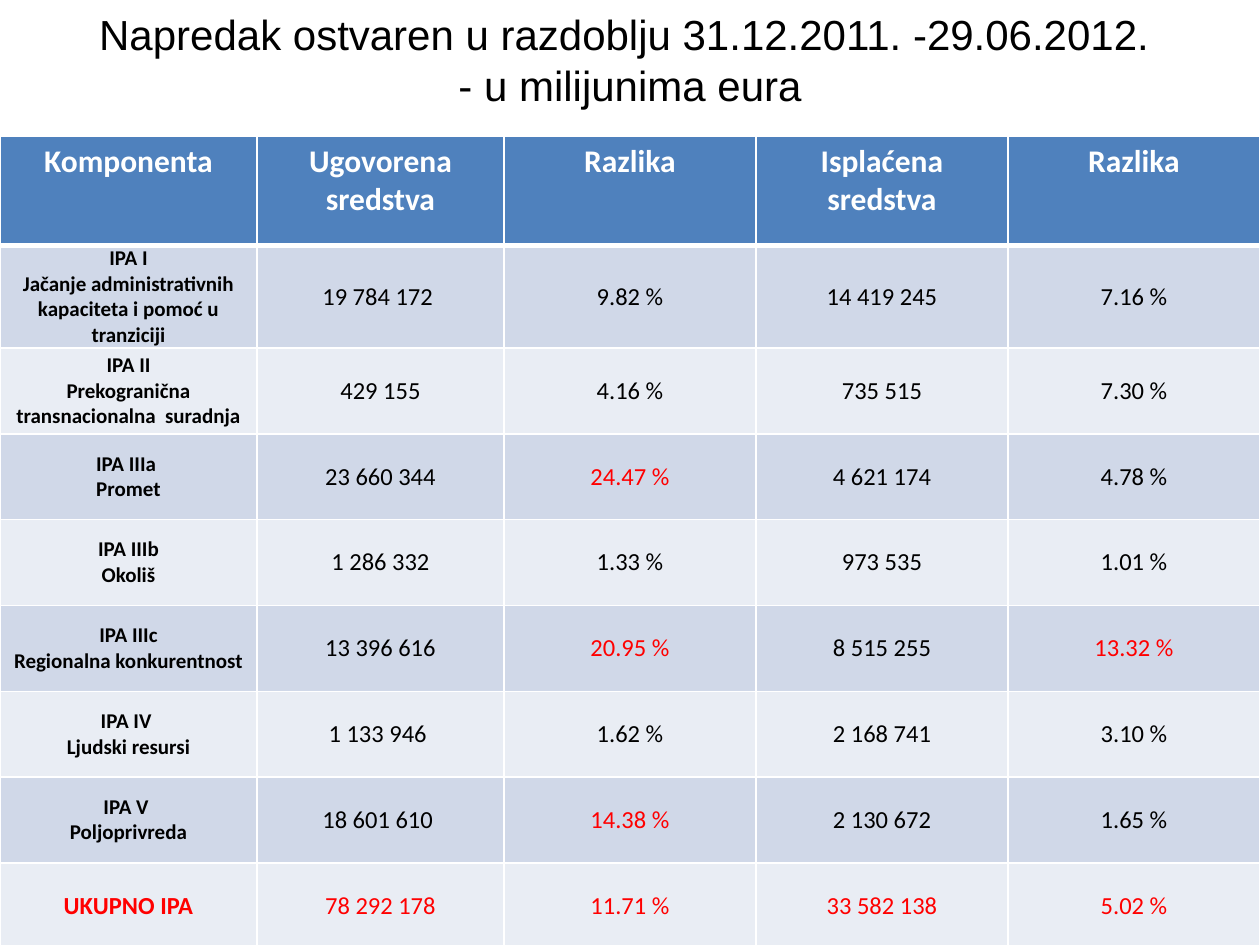
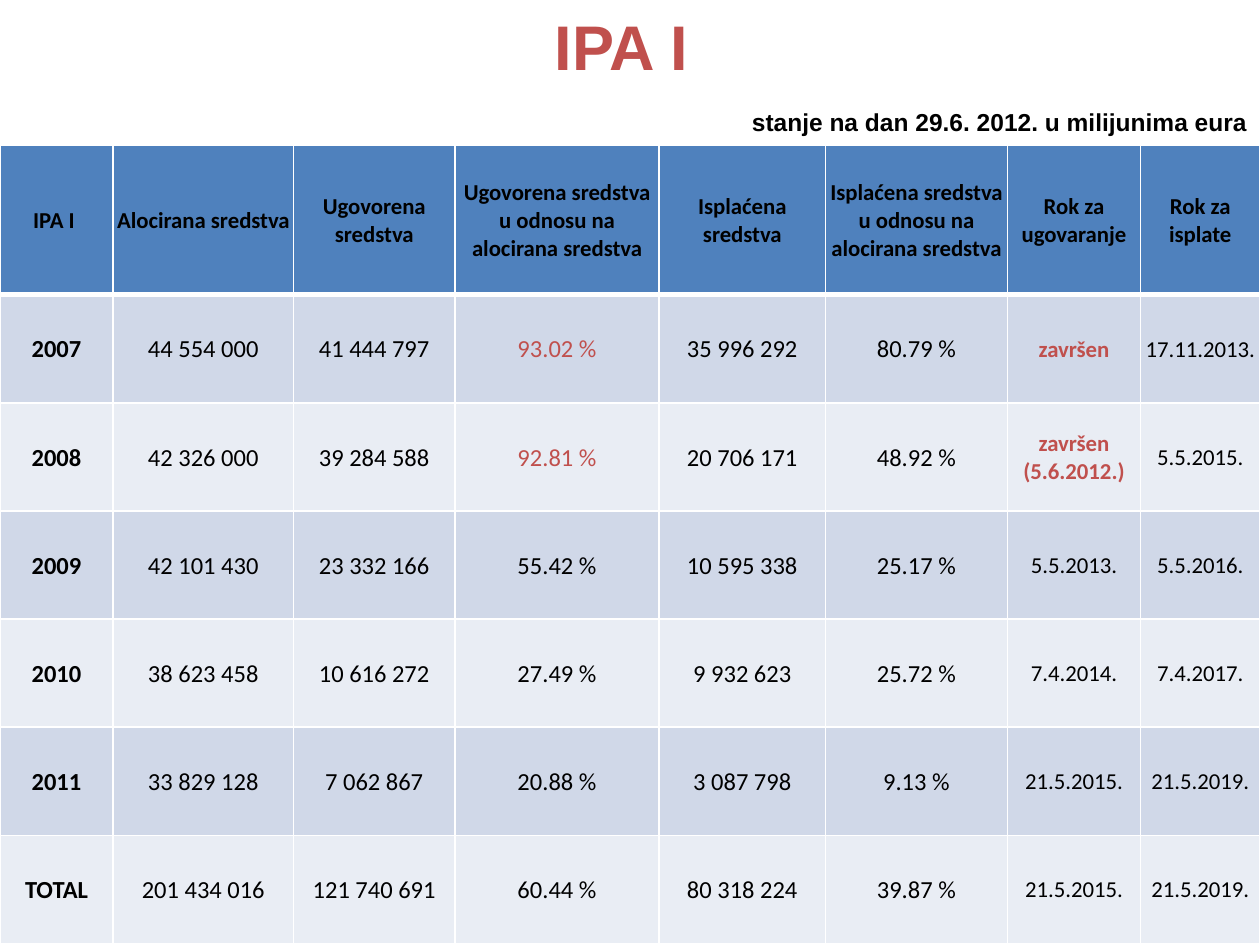
"""Build two slides with tables on the progress of IPA funding."""
from dataclasses import dataclass

from lxml.etree import SubElement
from pptx import Presentation
from pptx.dml.color import RGBColor
from pptx.enum.text import MSO_ANCHOR, MSO_AUTO_SIZE, PP_ALIGN
from pptx.oxml.ns import qn
from pptx.util import Cm, Pt


@dataclass(frozen=True)
class Theme:
    header: str = "4F81BD"
    bands: tuple = ("D0D8E8", "E9EDF4")
    white: str = "FFFFFF"
    black: str = "000000"
    red: str = "FF0000"
    brick: str = "C0504D"
    title_font: str = "Arial"
    table_font: str = "Calibri"
    large_title: int = 36
    title: int = 24
    header_text: int = 18
    body: int = 14
    compact: int = 13
    label: int = 12
    grid_line: int = 1
    header_line: int = 3


THEME = Theme()


@dataclass(frozen=True)
class CellStyle:
    size: int
    color: str = THEME.black
    bold: bool = False
    anchor: MSO_ANCHOR = MSO_ANCHOR.MIDDLE
    margins: tuple = (0.25, 0.13, 0.25, 0.13)


PROGRESS_TITLE = """Napredak ostvaren u razdoblju 31.12.2011. -29.06.2012. 
- u milijunima eura"""
PROGRESS_ROWS = [
    ("Komponenta", "Ugovorena sredstva", "Razlika", "Isplaćena sredstva", "Razlika"),
    ("IPA I\nJačanje administrativnih kapaciteta i pomoć u tranziciji",
     "19 784 172 ", "9.82 %", "14 419 245", "7.16 %"),
    ("IPA II\nPrekogranična transnacionalna  suradnja",
     "429 155", "4.16 %", "735 515", "7.30 %"),
    ("IPA IIIa \nPromet", "23 660 344", "24.47 %", "4 621 174", "4.78 %"),
    ("IPA IIIb\nOkoliš", "1 286 332", "1.33 %", "973 535", "1.01 %"),
    ("IPA IIIc\nRegionalna konkurentnost", "13 396 616", "20.95 %", "8 515 255", "13.32 %"),
    ("IPA IV \nLjudski resursi", "1 133 946 ", "1.62 %", "2 168 741", "3.10 %"),
    ("IPA V \nPoljoprivreda", "18 601 610 ", "14.38 %", "2 130 672", "1.65 %"),
    ("UKUPNO IPA", "78 292 178", "11.71 %", "33 582 138", "5.02 %"),
]
YEAR_ROWS = [
    ("IPA I ", "Alocirana sredstva", "Ugovorena sredstva",
     "Ugovorena sredstva u odnosu na alocirana sredstva", "Isplaćena sredstva",
     "Isplaćena sredstva u odnosu na alocirana sredstva", "Rok za ugovaranje",
     "Rok za isplate"),
    ("2007", "44 554 000", "41 444 797", "93.02 %", "35 996 292", "80.79 %",
     "završen", "17.11.2013."),
    ("2008", "42 326 000", "39 284 588", "92.81 %", "20 706 171", "48.92 %",
     "završen (5.6.2012.)", "5.5.2015."),
    ("2009", "42 101 430", "23 332 166", "55.42 %", "10 595 338", "25.17 %",
     "5.5.2013.", "5.5.2016."),
    ("2010", "38 623 458", "10 616 272", "27.49 %", "9 932 623", "25.72 %",
     "7.4.2014.", "7.4.2017."),
    ("2011", "33 829 128", "7 062 867", "20.88 %", "3 087 798", "9.13 %",
     "21.5.2015.", "21.5.2019."),
    ("TOTAL", "201 434 016", "121 740 691", "60.44 %", "80 318 224", "39.87 %",
     "21.5.2015.", "21.5.2019."),
]


def percent_above(text, limit):
    return text.endswith("%") and float(text.rstrip(" %")) > limit


def progress_style(row, column, text):
    if row == 0:
        return CellStyle(THEME.header_text, THEME.white, True, MSO_ANCHOR.TOP)
    is_total = row == len(PROGRESS_ROWS) - 1
    color = THEME.red if is_total or percent_above(text, 10) else THEME.black
    if column == 0:
        size = THEME.body if is_total else THEME.label
        return CellStyle(size, color, True, margins=(0, 0, 0, 0))
    return CellStyle(THEME.body, color)


def year_style(row, column, text):
    is_finished = text.startswith("završen")
    is_accent = is_finished or percent_above(text, 90)
    return CellStyle(
        size=THEME.compact if row == 0 or column >= 6 else THEME.body,
        color=THEME.brick if is_accent else THEME.black,
        bold=row == 0 or column == 0 or is_finished,
        margins=(0.03, 0.03, 0.03, 0),
    )


class Deck:
    def __init__(self, theme):
        self.theme = theme
        self.presentation = Presentation()
        self.presentation.slide_width = Cm(25.4)
        self.presentation.slide_height = Cm(19.05)
        self.slide = None

    def add_slide(self):
        self.slide = self.presentation.slides.add_slide(self.presentation.slide_layouts[6])

    def format_text(self, text_frame, font_name, size, color, bold, alignment=PP_ALIGN.CENTER):
        for paragraph in text_frame.paragraphs:
            paragraph.alignment = alignment
            for run in paragraph.runs:
                run.font.name = font_name
                run.font.size = Pt(size)
                run.font.bold = bold
                run.font.color.rgb = RGBColor.from_string(color)

    def add_text(self, text, box, size, color, bold=False, alignment=PP_ALIGN.CENTER):
        shape = self.slide.shapes.add_textbox(*map(Cm, box))
        text_frame = shape.text_frame
        text_frame.word_wrap = True
        text_frame.auto_size = MSO_AUTO_SIZE.SHAPE_TO_FIT_TEXT
        text_frame.paragraphs[0].text = text
        self.format_text(text_frame, self.theme.title_font, size, color, bold, alignment)

    def add_borders(self, cell, row):
        properties = cell._tc.get_or_add_tcPr()
        for side in "LRTB":
            is_header_edge = (row, side) in ((0, "B"), (1, "T"))
            width = self.theme.header_line if is_header_edge else self.theme.grid_line
            line = SubElement(properties, qn(f"a:ln{side}"), w=str(Pt(width)))
            fill = SubElement(line, qn("a:solidFill"))
            SubElement(fill, qn("a:srgbClr"), val=self.theme.white)

    def fill_cell(self, cell, row, text, style):
        self.add_borders(cell, row)
        color = self.theme.bands[(row - 1) % 2] if row else self.theme.header
        cell.fill.solid()
        cell.fill.fore_color.rgb = RGBColor.from_string(color)
        cell.vertical_anchor = style.anchor
        (cell.margin_left, cell.margin_top,
         cell.margin_right, cell.margin_bottom) = map(Cm, style.margins)
        cell.text_frame.text = text
        self.format_text(cell.text_frame, self.theme.table_font, style.size,
                         style.color, style.bold)

    def add_table(self, rows, top, widths, heights, style_of):
        frame = self.slide.shapes.add_table(
            len(rows), len(widths), Cm(0), Cm(top), Cm(sum(widths)), Cm(sum(heights)))
        table = frame.table
        table.horz_banding = False
        for column, width in zip(table.columns, widths):
            column.width = Cm(width)
        for row, height in zip(table.rows, heights):
            row.height = Cm(height)
        for row, texts in enumerate(rows):
            for column, text in enumerate(texts):
                self.fill_cell(table.cell(row, column), row, text, style_of(row, column, text))

    def save(self):
        self.presentation.save("out.pptx")


def main():
    deck = Deck(THEME)

    deck.add_slide()
    deck.add_table(PROGRESS_ROWS, 2.74, [5.18, 4.98] + [5.08] * 3,
                   [2.21, 2.01] + [1.73] * 7, progress_style)
    deck.add_text(PROGRESS_TITLE, (0, 0.05, 25.4, 2.31), THEME.title, THEME.black)

    deck.add_slide()
    deck.add_table(YEAR_ROWS, 2.92, [2.28, 3.64, 3.25, 4.12, 3.35, 3.67, 2.68, 2.41],
                   [3.02] + [2.18] * 6, year_style)
    deck.add_text("IPA I ", (0, 0.03, 25.4, 1.8), THEME.large_title, THEME.brick, bold=True)
    deck.add_text("stanje na dan 29.6. 2012. u milijunima eura", (14, 2.03, 11.4, 0.86),
                  THEME.body, THEME.black, bold=True, alignment=PP_ALIGN.RIGHT)

    deck.save()


if __name__ == "__main__":
    main()
